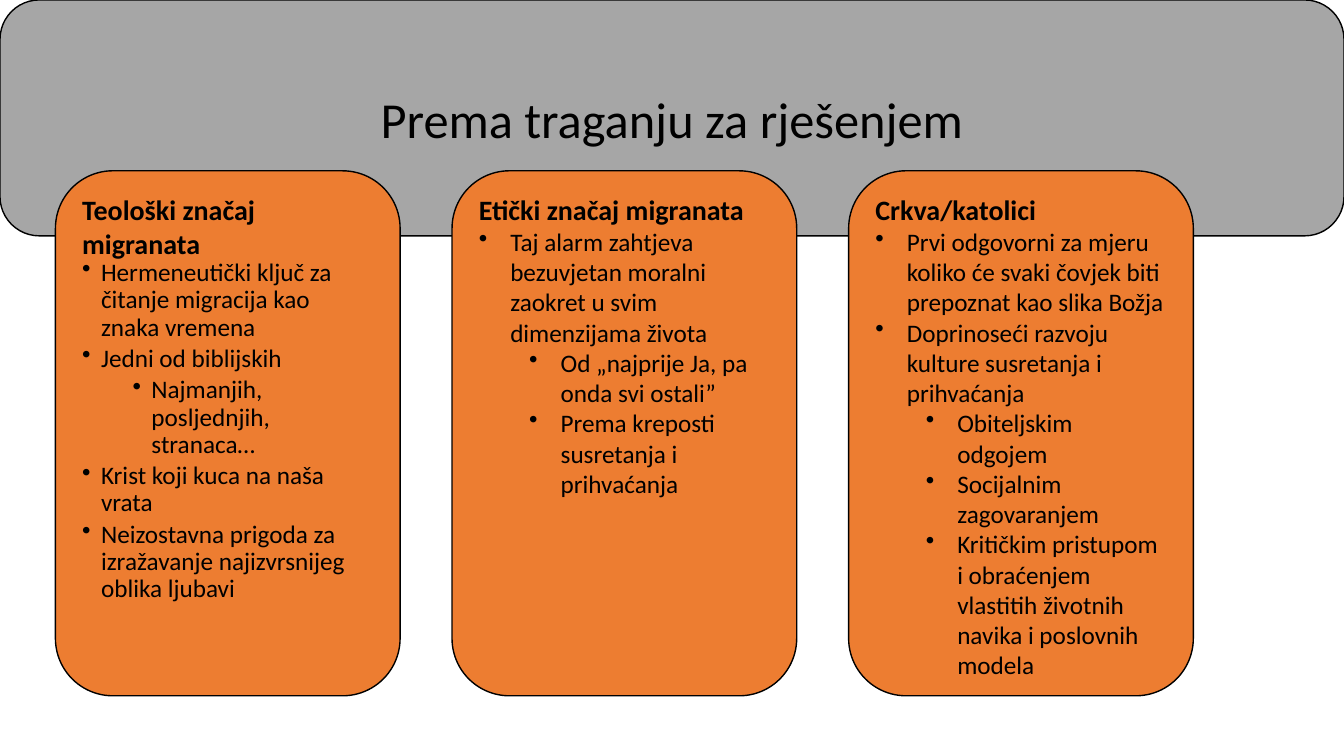
from lxml import etree
from pptx import Presentation
from pptx.dml.color import RGBColor
from pptx.enum.shapes import MSO_SHAPE
from pptx.enum.text import MSO_ANCHOR, PP_ALIGN
from pptx.oxml.ns import qn
from pptx.util import Pt

ROUNDED = MSO_SHAPE.ROUNDED_RECTANGLE
TOP, MIDDLE = MSO_ANCHOR.TOP, MSO_ANCHOR.MIDDLE
LEFT, CENTER = PP_ALIGN.LEFT, PP_ALIGN.CENTER

BLACK = RGBColor(0x00, 0x00, 0x00)
GRAY = RGBColor(0xA6, 0xA6, 0xA6)
ORANGE = RGBColor(0xED, 0x7D, 0x31)

CARD_LEFT, CARD_TOP = 39.6, 122
CARD_WIDTH, CARD_HEIGHT = 246.2, 375
CARD_PITCH = 283.3
LEVEL_STEP = 36

# Per card: heading, hanging indent, line spacing, space after, right inset, bullets (depth, text)
CARDS = [
    ("Teološki značaj migranata", 13.5, 0.9, 3, 14, [
        (0, "Hermeneutički ključ za čitanje migracija kao znaka vremena"),
        (0, "Jedni od biblijskih"),
        (1, "Najmanjih, posljednjih, stranaca…"),
        (0, "Krist koji kuca na naša vrata"),
        (0, "Neizostavna prigoda za izražavanje najizvrsnijeg oblika ljubavi"),
    ]),
    ("Etički značaj migranata", 22.5, 1.0, 0, 7.2, [
        (0, "Taj alarm zahtjeva bezuvjetan moralni zaokret u svim dimenzijama života"),
        (1, "Od „najprije Ja, pa onda svi ostali”"),
        (1, "Prema kreposti susretanja i prihvaćanja"),
    ]),
    ("Crkva/katolici", 22.5, 1.0, 0, 7.2, [
        (0, "Prvi odgovorni za mjeru koliko će svaki čovjek biti prepoznat kao slika Božja"),
        (0, "Doprinoseći razvoju kulture susretanja i prihvaćanja"),
        (1, "Obiteljskim odgojem"),
        (1, "Socijalnim zagovaranjem"),
        (1, "Kritičkim pristupom i obraćenjem vlastitih životnih navika i poslovnih modela"),
    ]),
]


def add_panel(left, top, width, height, color, anchor):
    shape = slide.shapes.add_shape(ROUNDED, Pt(left), Pt(top), Pt(width), Pt(height))
    shape.shadow.inherit = False
    shape.fill.solid()
    shape.fill.fore_color.rgb = color
    shape.line.color.rgb = BLACK
    shape.line.width = Pt(1)
    shape.text_frame.word_wrap = True
    shape.text_frame.vertical_anchor = anchor
    return shape.text_frame


def set_text(paragraph, text, size, alignment=LEFT, bold=False):
    paragraph.text = text
    paragraph.alignment = alignment
    paragraph.font.name = "Calibri"
    paragraph.font.size = Pt(size)
    paragraph.font.bold = bold
    paragraph.font.color.rgb = BLACK


presentation = Presentation()
presentation.slide_width = Pt(960)
presentation.slide_height = Pt(540)
slide = presentation.slides.add_slide(presentation.slide_layouts[6])

# Title band
title_frame = add_panel(0, 0, 960, 168.5, GRAY, MIDDLE)
set_text(title_frame.paragraphs[0], "Prema traganju za rješenjem", 36, CENTER)

# Cards
for column, (heading, indent, line_spacing, space_after, right_inset, bullets) in enumerate(CARDS):
    card_frame = add_panel(CARD_LEFT + column * CARD_PITCH, CARD_TOP,
                           CARD_WIDTH, CARD_HEIGHT, ORANGE, TOP)
    card_frame.margin_right = Pt(right_inset)
    set_text(card_frame.paragraphs[0], heading, 20, bold=True)

    for depth, text in bullets:
        paragraph = card_frame.add_paragraph()
        set_text(paragraph, text, 18)
        paragraph.level = depth
        paragraph.line_spacing = line_spacing
        paragraph.space_after = Pt(space_after)

        # Bullet with hanging indent
        properties = paragraph._p.get_or_add_pPr()
        properties.set("marL", str(Pt(indent + depth * LEVEL_STEP)))
        properties.set("indent", str(-Pt(indent)))
        bullet = etree.Element(qn("a:buChar"), char="•")
        properties.find(qn("a:defRPr")).addprevious(bullet)

presentation.save("out.pptx")
